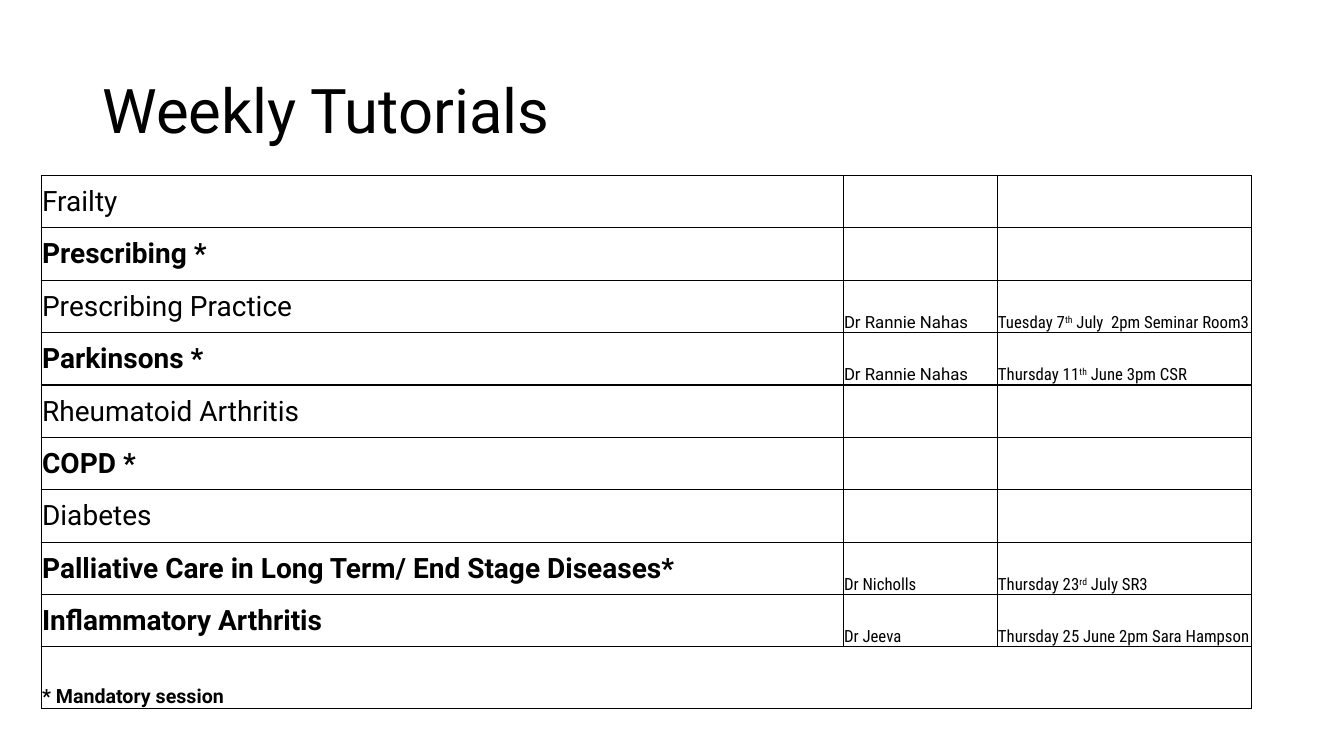
import pptx
import pptx.dml.color
import pptx.enum.text
import pptx.oxml
import pptx.oxml.ns
import pptx.util
from pptx.util import Cm, Pt

# Content: topic, bold, tutor, tutor font, date as (text, superscript) pieces
TITLE = "Weekly Tutorials"
REGULAR, CONDENSED = "Roboto", "Roboto Condensed"
SESSIONS = [
    ("Frailty", False, "", REGULAR, []),
    ("Prescribing *", True, "", REGULAR, []),
    ("Prescribing Practice", False, "Dr Rannie Nahas", REGULAR,
     [("Tuesday 7", False), ("th", True), (" July  2pm Seminar Room3", False)]),
    ("Parkinsons *", True, "Dr Rannie Nahas", REGULAR,
     [("Thursday 11", False), ("th", True), (" June 3pm CSR", False)]),
    ("Rheumatoid Arthritis", False, "", REGULAR, []),
    ("COPD *", True, "", REGULAR, []),
    ("Diabetes", False, "", REGULAR, []),
    ("Palliative Care in Long Term/ End Stage Diseases*", True, "Dr Nicholls", CONDENSED,
     [("Thursday 23", False), ("rd", True), (" July SR3", False)]),
    ("Inflammatory Arthritis", True, "Dr Jeeva", CONDENSED,
     [("Thursday 25 June 2pm Sara Hampson", False)]),
]
FOOTNOTE = "* Mandatory session"

# Format
BLACK = pptx.dml.color.RGBColor(0x00, 0x00, 0x00)
WHITE = pptx.dml.color.RGBColor(0xFF, 0xFF, 0xFF)
TOPIC_FONT = {"size": Pt(20), "name": REGULAR}
DETAIL_FONT = {"size": Pt(12), "bold": False}
FOOTNOTE_FONT = {"size": Pt(14), "name": REGULAR, "bold": True}
TITLE_FONT = {"size": Pt(44), "name": REGULAR}
MIDDLE = pptx.enum.text.MSO_ANCHOR.MIDDLE
BOTTOM = pptx.enum.text.MSO_ANCHOR.BOTTOM
CELL_MARGINS = {"margin_left": Cm(0.02), "margin_right": Cm(0.02),
                "margin_top": Cm(0.02), "margin_bottom": Cm(0)}
COLUMN_WIDTHS = [Cm(20.21), Cm(3.88), Cm(6.41)]
ROW_HEIGHT, FOOTNOTE_HEIGHT = Cm(1.32), Cm(1.55)


def set_attributes(target, values):
    for name, value in values.items():
        setattr(target, name, value)


def add_run(paragraph, text, font, superscript=False):
    run = paragraph.add_run()
    run.text = text
    set_attributes(run.font, font)
    run.font.color.rgb = BLACK
    if superscript:
        run.font._element.set("baseline", "30000")


def fill_cell(cell, pieces, font, anchor):
    set_attributes(cell, CELL_MARGINS)
    cell.vertical_anchor = anchor
    for text, superscript in pieces:
        add_run(cell.text_frame.paragraphs[0], text, font, superscript)


def style_cell(cell):
    cell.fill.solid()
    cell.fill.fore_color.rgb = WHITE
    properties = cell._tc.get_or_add_tcPr()
    for position, side in enumerate(("lnL", "lnR", "lnT", "lnB")):
        properties.insert(position, pptx.oxml.parse_xml(
            f'<a:{side} {pptx.oxml.ns.nsdecls("a")} w="{Pt(1)}"><a:solidFill>'
            f'<a:srgbClr val="{BLACK}"/></a:solidFill></a:{side}>'))


def main():
    presentation = pptx.Presentation()
    presentation.slide_width, presentation.slide_height = Cm(33.87), Cm(19.05)
    slide = presentation.slides.add_slide(presentation.slide_layouts.get_by_name("Title Only"))

    # Title
    title = slide.shapes.title
    set_attributes(title, {"left": Cm(2.33), "top": Cm(1.01),
                           "width": Cm(29.21), "height": Cm(3.68)})
    set_attributes(title.text_frame, {"vertical_anchor": MIDDLE, "word_wrap": True,
                                      "auto_size": pptx.enum.text.MSO_AUTO_SIZE.NONE})
    paragraph = title.text_frame.paragraphs[0]
    set_attributes(paragraph, {"alignment": pptx.enum.text.PP_ALIGN.LEFT, "line_spacing": 0.9})
    add_run(paragraph, TITLE, TITLE_FONT)

    # Table grid
    footnote_row = len(SESSIONS)
    table = slide.shapes.add_table(
        footnote_row + 1, len(COLUMN_WIDTHS), Cm(1.04), Cm(4.42), sum(COLUMN_WIDTHS),
        ROW_HEIGHT * footnote_row + FOOTNOTE_HEIGHT).table
    set_attributes(table, {"first_row": False, "horz_banding": False})
    for column, width in zip(table.columns, COLUMN_WIDTHS):
        column.width = width
    for row in table.rows:
        row.height = ROW_HEIGHT
    table.rows[footnote_row].height = FOOTNOTE_HEIGHT
    for cell in table.iter_cells():
        style_cell(cell)

    # Sessions
    for row, (topic, bold, tutor, tutor_font, date) in enumerate(SESSIONS):
        fill_cell(table.cell(row, 0), [(topic, False)], {**TOPIC_FONT, "bold": bold}, MIDDLE)
        if tutor:
            fill_cell(table.cell(row, 1), [(tutor, False)],
                      {**DETAIL_FONT, "name": tutor_font}, BOTTOM)
            fill_cell(table.cell(row, 2), date, {**DETAIL_FONT, "name": CONDENSED}, BOTTOM)

    # Footnote across all columns
    footnote = table.cell(footnote_row, 0)
    footnote.merge(table.cell(footnote_row, len(COLUMN_WIDTHS) - 1))
    fill_cell(footnote, [(FOOTNOTE, False)], FOOTNOTE_FONT, BOTTOM)

    presentation.save("out.pptx")


if __name__ == "__main__":
    main()
